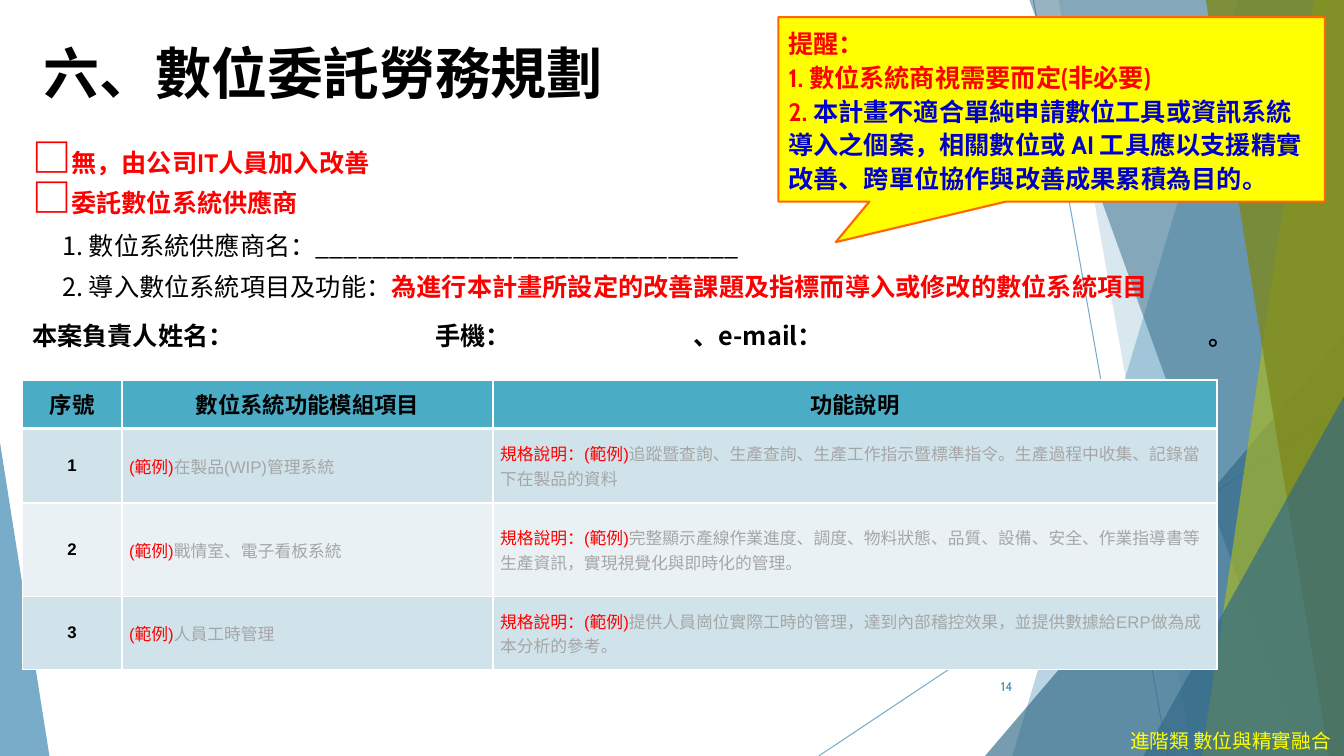
from lxml import etree
from pptx import Presentation
from pptx import util as u
from pptx.dml.color import RGBColor
from pptx.enum import shapes, text
from pptx.oxml.ns import qn

Inches, Pt = u.Inches, u.Pt
CJK, CABIN, ARIAL = "Noto Sans CJK SC", "Cabin", "Arial"
RED, BLACK, GREY, WHITE = "FF0000", "000000", "A6A6A6", "FFFFFF"
BLUE, NAVY = "418AB3", "316886"


def paint(fill, color, opacity=100):
    fill.solid()
    fill.fore_color.rgb = RGBColor.from_string(color)
    if opacity < 100:
        clr = fill._xPr.find(".//" + qn("a:srgbClr"))
        etree.SubElement(clr, qn("a:alpha"), val=str(opacity * 1000))


def add_run(p, words, size, color, bold=False, font=CJK, underline=False):
    r = p.add_run()
    r.text = words
    r.font.size = Pt(size)
    r.font.bold = bold
    r.font.underline = underline
    r.font.name = font
    paint(r.font.fill, color)
    latin = r.font._element.find(qn("a:latin"))
    latin.addnext(latin.makeelement(qn("a:ea"), {"typeface": CJK}))


prs = Presentation()
prs.slide_width, prs.slide_height = Inches(13.33), Inches(7.5)
s = prs.slides.add_slide(prs.slide_layouts[5])

for x1, y1, x2, y2 in [(10.25, 0, 11.58, 7.5), (13.33, 4.03, 8.12, 7.5)]:
    line = s.shapes.add_connector(
        shapes.MSO_CONNECTOR.STRAIGHT, Inches(x1), Inches(y1), Inches(x2), Inches(y2))
    line.line.width = Pt(0.75)
    paint(line.line.fill, BLUE, 70)
    etree.SubElement(line._element.spPr, qn("a:effectLst"))

facets = [
    ((12.28, 10.04), BLUE, 36),
    ((10.5, 11.83), BLUE, 20),
    ((9.77, 3.33, 3.56, 4.17, 1), NAVY, 66),
    ((10.21, 12.91), NAVY, 50),
    ((13.03, 11.92), "A6B727", 70),
    ((11.96, 13.18), "7D891D", 80),
    ((11.34, 3.93, 1.99, 3.57, 1), NAVY, 66),
    ((0, 4.39, 0.49, 3.11, 0), BLUE, 70),
]
for geometry, color, opacity in facets:
    if len(geometry) == 2:
        top_x, bottom_x = map(Inches, geometry)
        fb = s.shapes.build_freeform(top_x, 0)
        fb.add_line_segments([(prs.slide_width, 0), (prs.slide_width, prs.slide_height),
                              (bottom_x, prs.slide_height)])
        sp = fb.convert_to_shape()
    else:
        *box, apex = geometry
        sp = s.shapes.add_shape(shapes.MSO_SHAPE.ISOSCELES_TRIANGLE, *map(Inches, box))
        sp.adjustments[0] = apex
    paint(sp.fill, color, opacity)
    sp.line.fill.background()
    sp.shadow.inherit = False

footer = s.shapes.add_textbox(Inches(11.11), Inches(7.14), Inches(2.26), Inches(0.36))
p = footer.text_frame.paragraphs[0]
p.line_spacing = 1.2
add_run(p, "進階類 數位與精實融合", 14, "FFFF00")

title = s.shapes.title
title.left, title.top = Inches(0.33), Inches(0.33)
title.width, title.height = Inches(12.64), Inches(0.77)
title.text_frame.vertical_anchor = text.MSO_ANCHOR.TOP
p = title.text_frame.paragraphs[0]
p.alignment = text.PP_ALIGN.LEFT
add_run(p, "六、數位委託勞務規劃", 40, BLACK, True)

body = s.shapes.add_textbox(Inches(0.22), Inches(1.34), Inches(12.64), Inches(2.22))
tf = body.text_frame
tf.word_wrap = True
p = tf.paragraphs[0]
for option, font in [("無，由公司IT人員加入改善", CABIN), ("委託數位系統供應商", CJK)]:
    p.line_spacing = Pt(28.8)
    add_run(p, "□", 28, RED, True)
    add_run(p, option, 18, RED, True, font)
    p = tf.add_paragraph()
for item, note in [
    ("1. 數位系統供應商名：______________________________", ""),
    ("2. 導入數位系統項目及功能：", "為進行本計畫所設定的改善課題及指標而導入或修改的數位系統項目"),
]:
    p.line_spacing = Pt(28.8)
    p._p.get_or_add_pPr().set("indent", str(Inches(0.3)))
    add_run(p, item, 18, BLACK)
    if note:
        add_run(p, note, 18, RED, True)
    p = tf.add_paragraph()
p.line_spacing = Pt(35)
tabs = etree.SubElement(p._p.get_or_add_pPr(), qn("a:tabLst"))
for label, blank_end in [("本案負責人姓名：", 4), ("手機： ", 6.56), ("、e-mail： ", 11.67)]:
    etree.SubElement(tabs, qn("a:tab"), pos=str(Inches(blank_end)), algn="l")
    add_run(p, label, 18, BLACK, True)
    add_run(p, "\t", 18, BLACK, True, underline=True)
add_run(p, "。", 18, BLACK, True)

modules = [
    ("在製品(WIP)管理系統",
     "追蹤暨查詢、生產查詢、生產工作指示暨標準指令。生產過程中收集、記錄當下在製品的資料"),
    ("戰情室、電子看板系統",
     "完整顯示產線作業進度、調度、物料狀態、品質、設備、安全、作業指導書等生產資訊，實現視覺化與即時化的管理。"),
    ("人員工時管理",
     "提供人員崗位實際工時的管理，達到內部稽控效果，並提供數據給ERP做為成本分析的參考。"),
]
rows = [("序號", "數位系統功能模組項目", "功能說明")]
rows += [(str(n), *module) for n, module in enumerate(modules, 1)]
prefixes = ["", "(範例)", "規格說明：(範例)"]
row_fills = ["4BACC6", "D0E3EA", "E9F1F5", "D0E3EA"]
table = s.shapes.add_table(
    4, 3, Inches(0.22), Inches(3.77), Inches(11.85), Inches(2.87)).table
for column, width in zip(table.columns, [0.99, 3.68, 7.18]):
    column.width = Inches(width)
for row, height in zip(table.rows, [0.48, 0.74, 0.93, 0.72]):
    row.height = Inches(height)
for i, row in enumerate(rows):
    for j, words in enumerate(row):
        cell = table.cell(i, j)
        cell.vertical_anchor = text.MSO_ANCHOR.MIDDLE
        if j:
            cell.margin_left = cell.margin_right = Inches(0.07)
            cell.margin_top = cell.margin_bottom = 0
        p = cell.text_frame.paragraphs[0]
        if i == 0 or j == 0:
            p.alignment = text.PP_ALIGN.CENTER
            add_run(p, words, 12 if i else 16, BLACK, True, ARIAL)
        else:
            add_run(p, prefixes[j], 12, RED, font=ARIAL)
            add_run(p, words, 12, GREY, font=ARIAL)
        tcPr = cell._tc.get_or_add_tcPr()
        for side in "LRTB":
            thick = (i, side) in [(0, "B"), (1, "T")]
            ln = etree.SubElement(tcPr, qn("a:ln" + side), w=str(Pt(3 if thick else 1)))
            solid = etree.SubElement(ln, qn("a:solidFill"))
            etree.SubElement(solid, qn("a:srgbClr"), val=WHITE)
        paint(cell.fill, row_fills[i])

number = s.shapes.add_textbox(Inches(9.39), Inches(6.61), Inches(0.75), Inches(0.4))
number.text_frame.word_wrap = True
number.text_frame.vertical_anchor = text.MSO_ANCHOR.MIDDLE
p = number.text_frame.paragraphs[0]
p.alignment = text.PP_ALIGN.RIGHT
add_run(p, "14", 9, BLUE, font=CABIN)

reminder = s.shapes.add_shape(
    shapes.MSO_SHAPE.RECTANGULAR_CALLOUT, Inches(7.72), Inches(0.17), Inches(5.42), Inches(1.83))
reminder.adjustments[0], reminder.adjustments[1] = -0.395, 0.72
reminder.shadow.inherit = False
paint(reminder.fill, "FFFF00")
paint(reminder.line.fill, "FF6600")
reminder.line.width = Pt(1.5)
tf = reminder.text_frame
tf.word_wrap = True
tf.vertical_anchor = text.MSO_ANCHOR.MIDDLE
for i, words in enumerate(["提醒：", "1. 數位系統商視需要而定(非必要)", "2. "]):
    p = tf.add_paragraph() if i else tf.paragraphs[0]
    p.alignment = text.PP_ALIGN.LEFT
    p.line_spacing = Pt(24)
    add_run(p, words, 18, RED, True, CABIN)
add_run(p, "本計畫不適合單純申請數位工具或資訊系統導入之個案，相關數位或 AI 工具應以支援精實改善、"
        "跨單位協作與改善成果累積為目的。", 18, "0000CC", True, CABIN)

prs.save("out.pptx")
